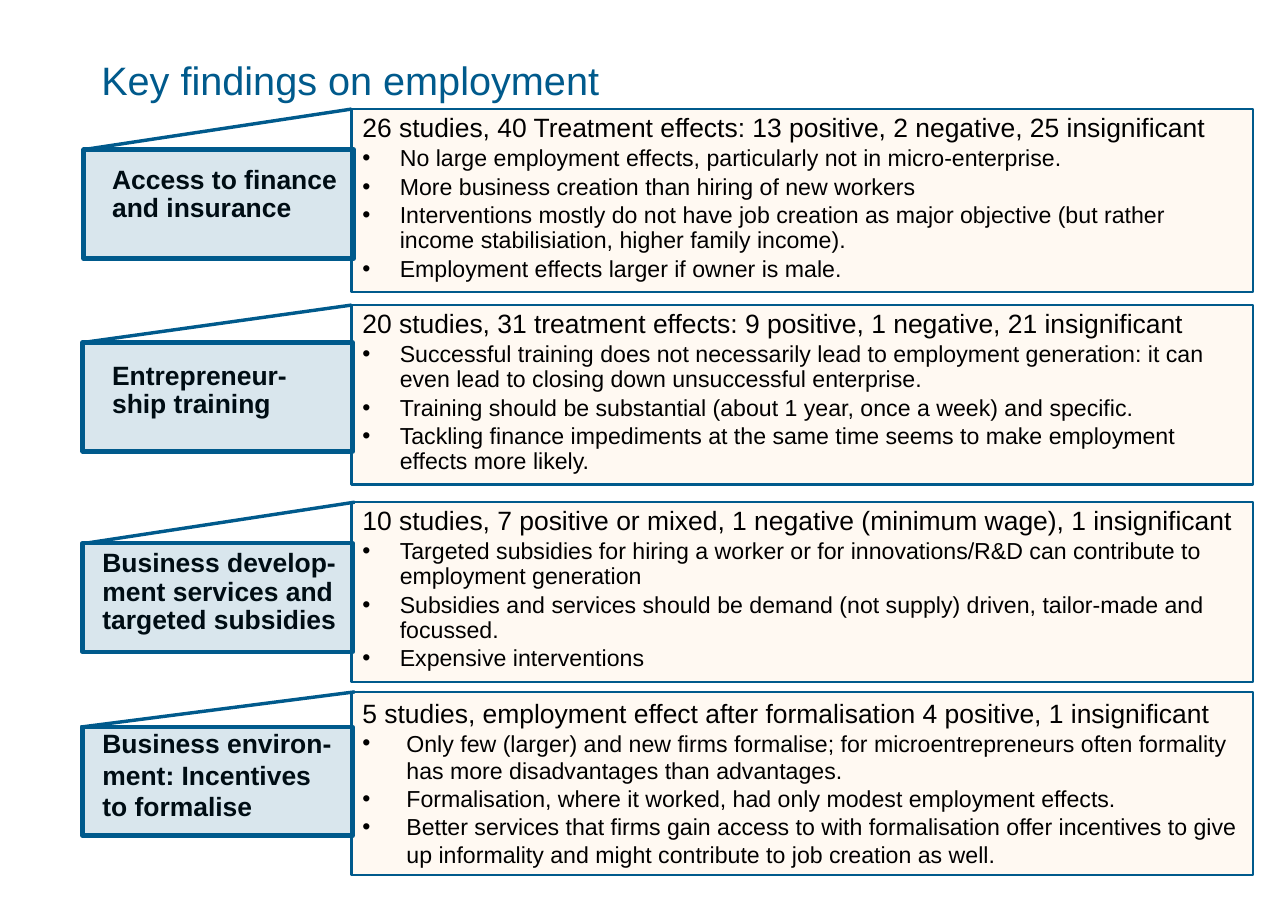
"""Build the slide on key employment findings for four kinds of intervention."""
from lxml import etree
from pptx import Presentation
from pptx.dml.color import RGBColor
from pptx.enum.shapes import MSO_CONNECTOR, MSO_SHAPE
from pptx.enum.text import MSO_ANCHOR, MSO_AUTO_SIZE, PP_ALIGN
from pptx.oxml.ns import qn
from pptx.util import Pt

RECT, STRAIGHT = MSO_SHAPE.RECTANGLE, MSO_CONNECTOR.STRAIGHT
TOP, LEFT, NO_FIT = MSO_ANCHOR.TOP, PP_ALIGN.LEFT, MSO_AUTO_SIZE.NONE
BLUE, ORANGE, BLACK = "005A8C", "FF9900", "000000"
FRAME_X, FRAME_W, CARD_W, CARD_H = 229.7, 589, 176.4, 71.1

ROWS = [
    {"frame": (71.3, 119.5), "card": (54.7, 97.9), "label": (66.2, 105.1, 164.2, 44.6),
     "line": (54, 229.7), "spacing": 0.9, "after": 2.3, "indent": 24.5,
     "name": "Access to finance and insurance",
     "head": "26 studies, 40 Treatment effects: 13 positive, 2 negative, 25 insignificant",
     "points": [
         "No large employment effects, particularly not in micro-enterprise.",
         "More business creation than hiring of new workers",
         "Interventions mostly do not have job creation as major objective "
         "(but rather income stabilisiation, higher family income).",
         "Employment effects larger if owner is male."]},
    {"frame": (199.4, 117.4), "card": (54, 223.9), "label": (66.2, 233.3, 153.4, 44.6),
     "line": (54, 229.7), "spacing": 0.9, "after": 2.3, "indent": 24.5,
     "name": "Entrepreneur-ship training",
     "head": "20 studies, 31 treatment effects: 9 positive, 1 negative, 21 insignificant",
     "points": [
         "Successful training does not necessarily lead to employment generation: "
         "it can even lead to closing down unsuccessful enterprise.",
         "Training should be substantial (about 1 year, once a week) and specific.",
         "Tackling finance impediments at the same time seems to make employment "
         "effects more likely."]},
    {"frame": (328.2, 117.4), "card": (54, 355), "label": (59.8, 355.7, 171.4, 64),
     "line": (56.2, 231.8), "spacing": 0.9, "after": 2.3, "indent": 24.5,
     "name": "Business develop-ment services and targeted subsidies",
     "head": "10 studies, 7 positive or mixed, 1 negative (minimum wage), 1 insignificant",
     "points": [
         "Targeted subsidies for hiring a worker or for innovations/R&D can contribute "
         "to employment generation",
         "Subsidies and services should be demand (not supply) driven, tailor-made "
         "and focussed.",
         "Expensive interventions"]},
    {"frame": (452.2, 119.5), "card": (54, 475.2), "label": (59.8, 471.6, 171.4, 70),
     "line": (52.6, 231.8), "spacing": 1.0, "after": 0, "indent": 28.8,
     "name": "Business environ-ment: Incentives to formalise",
     "head": "5 studies, employment effect after formalisation 4 positive, 1 insignificant",
     "points": [
         "Only few (larger) and new firms formalise; for microentrepreneurs often "
         "formality has more disadvantages than advantages.",
         "Formalisation, where it worked, had only modest employment effects.",
         "Better services that firms gain access to with formalisation offer incentives "
         "to give up informality and might contribute to job creation as well."]},
]


def add_box(x, y, w, h, fill, opacity, width):
    sp = s.shapes.add_shape(RECT, Pt(x), Pt(y), Pt(w), Pt(h))
    sp.shadow.inherit = False
    sp.fill.solid()
    sp.fill.fore_color.rgb = RGBColor.from_string(fill)
    color = sp.fill._xPr.find(qn("a:solidFill"))[0]
    etree.SubElement(color, qn("a:alpha"), val=str(opacity * 1000))
    sp.line.color.rgb = RGBColor.from_string(BLUE)
    sp.line.width = Pt(width)
    return sp


def write(p, text, size, color=BLACK, bold=False, spacing=1.0, after=0):
    for key, value in {"alignment": LEFT, "line_spacing": spacing,
                       "space_before": Pt(0), "space_after": Pt(after)}.items():
        setattr(p, key, value)
    r = p.add_run()
    r.text = text
    for key, value in {"name": "Arial", "size": Pt(size), "bold": bold}.items():
        setattr(r.font, key, value)
    r.font.color.rgb = RGBColor.from_string(color)


prs = Presentation()
prs.slide_width, prs.slide_height = Pt(841.7), Pt(595.4)
s = prs.slides.add_slide(prs.slide_layouts[5])

title = s.shapes.title
title.left, title.top, title.width, title.height = Pt(66.2), Pt(36.7), Pt(667.4), Pt(46.8)
tf = title.text_frame
for key, value in {"margin_left": 0, "margin_top": 0, "margin_right": 0, "margin_bottom": 0,
                   "vertical_anchor": TOP, "auto_size": NO_FIT, "word_wrap": True}.items():
    setattr(tf, key, value)
write(tf.paragraphs[0], "Key findings on employment", 25.9, BLUE)

for row in ROWS:
    top, height = row["frame"]
    tf = add_box(FRAME_X, top, FRAME_W, height, ORANGE, 5, 1.5).text_frame
    tf.word_wrap, tf.vertical_anchor = True, TOP
    for i, text in enumerate([row["head"]] + row["points"]):
        p = tf.add_paragraph() if i else tf.paragraphs[0]
        pPr = p._p.get_or_add_pPr()
        pPr.set("marL", str(Pt(row["indent"])))
        pPr.set("indent", str(-Pt(row["indent"])))
        if i:
            etree.SubElement(pPr, qn("a:buFont"), typeface="Arial")
            etree.SubElement(pPr, qn("a:buChar"), char="•")
        write(p, text, 15.1 if i else 17.3, spacing=row["spacing"], after=row["after"])

for row in ROWS:
    tf = s.shapes.add_textbox(*map(Pt, row["label"])).text_frame
    tf.word_wrap = True
    write(tf.paragraphs[0], row["name"], 17.3, bold=True, spacing=row["spacing"])

for row in ROWS:
    add_box(*row["card"], CARD_W, CARD_H, BLUE, 15, 3)

for row in ROWS:
    x1, x2 = row["line"]
    line = s.shapes.add_connector(STRAIGHT, Pt(x1), Pt(row["card"][1]),
                                  Pt(x2), Pt(row["frame"][0]))
    line.line.color.rgb = RGBColor.from_string(BLUE)
    line.line.width = Pt(2.25)
    etree.SubElement(line._element.spPr, qn("a:effectLst"))

prs.save("out.pptx")
